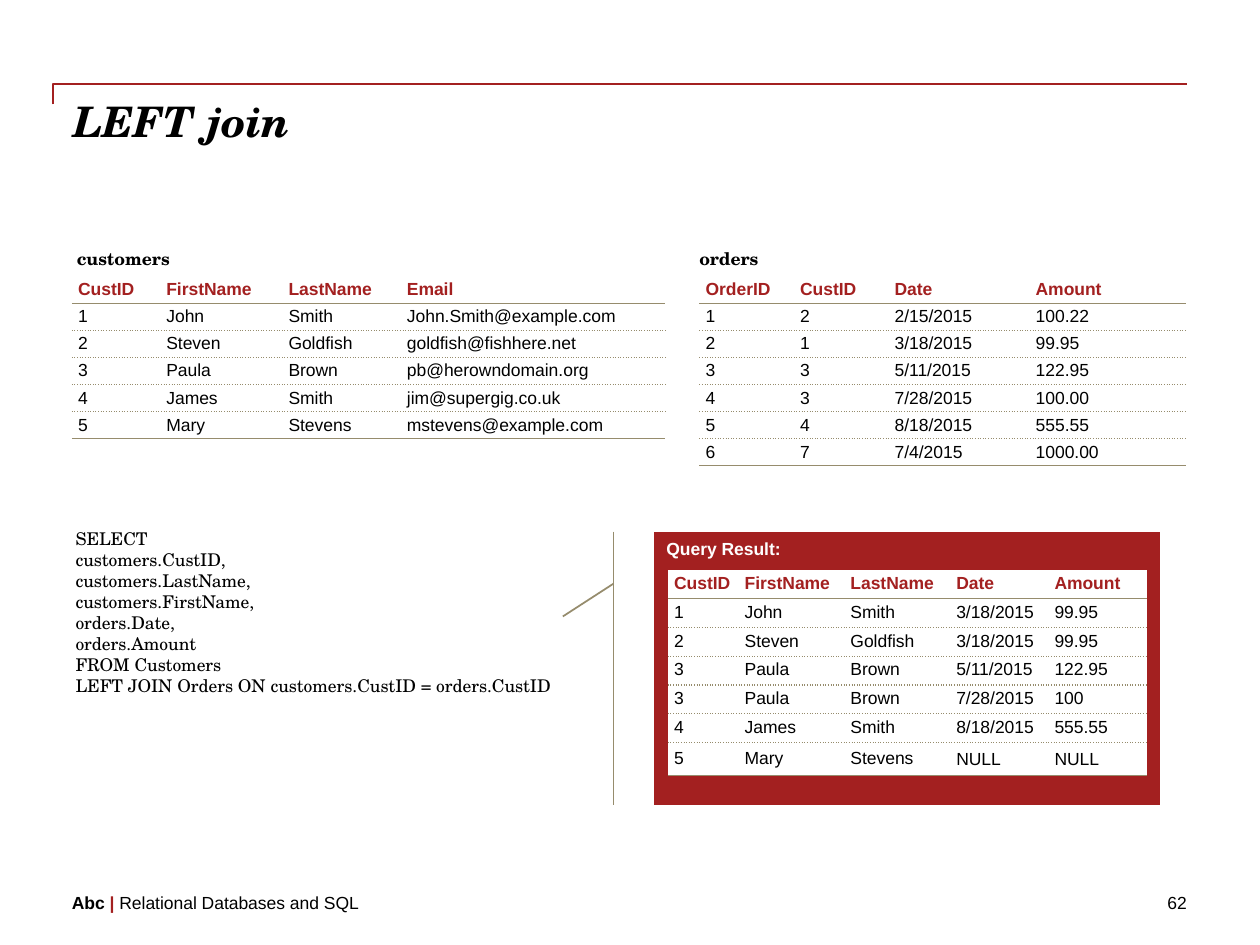
from dataclasses import dataclass

from lxml.etree import SubElement
from pptx import Presentation
from pptx.dml.color import RGBColor
from pptx.enum.shapes import MSO_CONNECTOR, MSO_SHAPE
from pptx.enum.text import MSO_ANCHOR, MSO_AUTO_SIZE, PP_ALIGN
from pptx.oxml.ns import qn
from pptx.util import Inches, Pt


@dataclass(frozen=True)
class Theme:
    red: str = "A32020"
    tan: str = "968C6D"
    black: str = "000000"
    white: str = "FFFFFF"
    serif: str = "TeX Gyre Schola"
    sans: str = "Arial"
    title_size: int = 24
    text_size: int = 10
    rule_width: float = 1
    border_width: float = 0.75
    cell_space_after: int = 9


THEME = Theme()
SLIDE_WIDTH, SLIDE_HEIGHT = Inches(10), Inches(7.5)

CUSTOMERS = [
    ("CustID", "FirstName", "LastName", "Email"),
    ("1", "John", "Smith", "John.Smith@example.com"),
    ("2", "Steven", "Goldfish", "goldfish@fishhere.net"),
    ("3", "Paula", "Brown", "pb@herowndomain.org"),
    ("4", "James", "Smith", "jim@supergig.co.uk"),
    ("5", "Mary", "Stevens", "mstevens@example.com"),
]
ORDERS = [
    ("OrderID", "CustID", "Date", "Amount"),
    ("1", "2", "2/15/2015", "100.22"),
    ("2", "1", "3/18/2015", "99.95"),
    ("3", "3", "5/11/2015", "122.95"),
    ("4", "3", "7/28/2015", "100.00"),
    ("5", "4", "8/18/2015", "555.55"),
    ("6", "7", "7/4/2015", "1000.00"),
]
RESULT = [
    ("CustID", "FirstName", "LastName", "Date", "Amount"),
    ("1", "John", "Smith", "3/18/2015", "99.95"),
    ("2", "Steven", "Goldfish", "3/18/2015", "99.95"),
    ("3", "Paula", "Brown", "5/11/2015", "122.95"),
    ("3", "Paula", "Brown", "7/28/2015", "100"),
    ("4", "James", "Smith", "8/18/2015", "555.55"),
    ("5", "Mary", "Stevens", "NULL", "NULL"),
]
QUERY = [
    "SELECT",
    "customers.CustID,",
    "customers.LastName,",
    "customers.FirstName,",
    "orders.Date,",
    "orders.Amount",
    "FROM Customers",
    "LEFT JOIN Orders ON customers.CustID = orders.CustID",
]


def across(percent):
    return round(SLIDE_WIDTH * percent / 100)


def down(percent):
    return round(SLIDE_HEIGHT * percent / 100)


def place(left, top, width, height):
    """Turn percentages of the slide into left, top, width and height."""
    return across(left), down(top), across(width), down(height)


def add_span(para, text, *, font=THEME.sans, size=THEME.text_size,
             color=THEME.black, bold=False, italic=False):
    span = para.add_run()
    span.text = text
    span.font.name, span.font.size = font, Pt(size)
    span.font.bold, span.font.italic = bold, italic
    span.font.color.rgb = RGBColor.from_string(color)


def write(frame, lines, *, align=PP_ALIGN.LEFT, margins=(0, 0), **span_format):
    """Fill a text frame; margins are (horizontal, vertical) in inches."""
    frame.word_wrap = True
    frame.auto_size = MSO_AUTO_SIZE.NONE
    frame.vertical_anchor = MSO_ANCHOR.TOP
    frame.margin_left = frame.margin_right = Inches(margins[0])
    frame.margin_top = frame.margin_bottom = Inches(margins[1])
    for index, line in enumerate(lines):
        para = frame.add_paragraph() if index else frame.paragraphs[0]
        para.alignment = align
        add_span(para, line, **span_format)


def add_label(page, text, area, **text_format):
    box = page.shapes.add_textbox(*place(*area))
    write(box.text_frame, [text], **text_format)
    return box


def add_panel(page, kind, area, fill, outline=None):
    panel = page.shapes.add_shape(kind, *place(*area))
    panel.shadow.inherit = False
    panel.fill.solid()
    panel.fill.fore_color.rgb = RGBColor.from_string(fill)
    if outline:
        panel.line.color.rgb = RGBColor.from_string(outline)
        panel.line.width = Pt(THEME.rule_width)
    else:
        panel.line.fill.background()
    return panel


def add_border(cell, side, dash=None):
    """Draw one cell side with the given dash, or hide it without one."""
    width = Pt(THEME.border_width) if dash else 0
    line = SubElement(cell._tc.get_or_add_tcPr(), qn(f"a:ln{side}"), w=str(width))
    if dash:
        fill = SubElement(line, qn("a:solidFill"))
        SubElement(fill, qn("a:srgbClr"), val=THEME.tan)
        SubElement(line, qn("a:prstDash"), val=dash)
    else:
        SubElement(line, qn("a:noFill"))


def add_data_table(page, left, top, columns, row_height, records, fill=None):
    last = len(records) - 1
    area = place(left, top, sum(columns), row_height * len(records))
    table = page.shapes.add_table(len(records), len(columns), *area).table
    table.first_row = table.horz_banding = False
    for column, width in zip(table.columns, columns):
        column.width = across(width)
    # Solid lines frame the body, dotted ones part its rows.
    dashes = [None, "solid"] + ["sysDot"] * (last - 1) + ["solid"]
    for index, record in enumerate(records):
        table.rows[index].height = down(row_height)
        for cell, text in zip(table.rows[index].cells, record):
            cell.margin_left = cell.margin_right = Inches(0.05)
            cell.margin_top = cell.margin_bottom = Inches(0.03)
            para = cell.text_frame.paragraphs[0]
            para.space_after = Pt(THEME.cell_space_after)
            add_span(para, text, bold=index == 0,
                     color=THEME.black if index else THEME.red)
            for side, dash in zip("LRTB", (None, None, *dashes[index:index + 2])):
                add_border(cell, side, dash)
            if fill:
                cell.fill.solid()
                cell.fill.fore_color.rgb = RGBColor.from_string(fill)
            else:
                cell.fill.background()
    return table


def add_title_rule(page):
    """Draw the rule over the title, with a short tick down at its left end."""
    rule = page.shapes.add_connector(
        MSO_CONNECTOR.ELBOW, across(50), down(70), across(48.4), down(-50))
    rule.line.color.rgb = RGBColor.from_string(THEME.red)
    rule.line.width = Pt(THEME.rule_width)
    properties = rule._element.spPr
    properties.find(qn("a:xfrm")).set("rot", str(90 * 60000))
    properties.find(qn("a:prstGeom")).set("prst", "bentConnector2")
    SubElement(properties, qn("a:effectLst"))


def add_title(page, text):
    title = page.shapes.title
    title.left, title.top, title.width, title.height = place(5.8, 10.13, 88.3, 5.33)
    write(title.text_frame, [text], font=THEME.serif, size=THEME.title_size,
          bold=True, italic=True)


def add_footer(page):
    footer = add_label(page, "Abc", (5.7, 94.4, 71.8, 2.27), bold=True)
    para = footer.text_frame.paragraphs[0]
    add_span(para, " | ", color=THEME.red, bold=True)
    add_span(para, "Relational Databases and SQL")
    add_label(page, "62", (77.5, 94.4, 16.7, 2.27), align=PP_ALIGN.RIGHT)


def add_query_result(page):
    callout = add_panel(page, MSO_SHAPE.LINE_CALLOUT_1_ACCENT_BAR,
                        (51.9, 56.27, 40.2, 28.93), THEME.red, THEME.tan)
    for index, share in enumerate((0.19, -0.08, 0.31, -0.18)):
        callout.adjustments[index] = share
    write(callout.text_frame, ["Query Result:"], margins=(0.1, 0.05),
          color=THEME.white, bold=True)
    table = add_data_table(page, 53, 60.33, (5.6, 8.4, 8.4, 7.8, 7.8), 3.04,
                           RESULT, fill=THEME.white)
    last_row = table.rows[len(RESULT) - 1]
    last_row.height = down(3.49)
    for cell in last_row.cells:
        cell.margin_top = cell.margin_bottom = Inches(0.05)
        if cell.text == "NULL":
            cell.vertical_anchor = MSO_ANCHOR.BOTTOM


def main():
    deck = Presentation()
    deck.slide_width, deck.slide_height = SLIDE_WIDTH, SLIDE_HEIGHT
    page = deck.slides.add_slide(deck.slide_layouts.get_by_name("Title Only"))
    add_title_rule(page)
    add_title(page, "LEFT join")
    add_footer(page)
    add_data_table(page, 5.7, 29.2, (7, 9.7, 9.4, 21), 2.87, CUSTOMERS)
    add_data_table(page, 55.5, 29.2, (7.5, 7.5, 11.2, 12.4), 2.87, ORDERS)
    for name, left in (("customers", 6.1), ("orders", 55.5)):
        add_label(page, name, (left, 26.27, 15, 2.27), font=THEME.serif, bold=True)
    query = add_panel(page, MSO_SHAPE.RECTANGLE, (6, 55.87, 45, 18), THEME.white)
    write(query.text_frame, QUERY, font=THEME.serif)
    add_query_result(page)
    deck.save("out.pptx")


if __name__ == "__main__":
    main()
